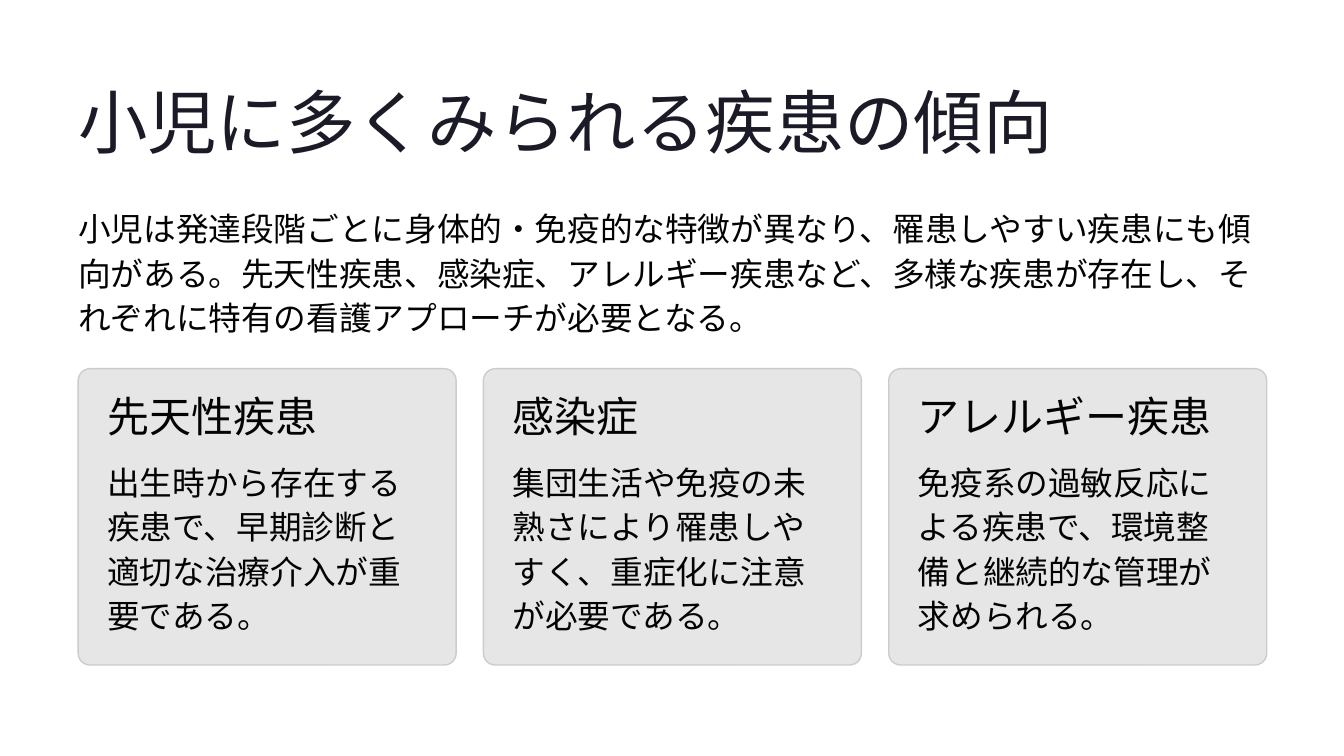
import pptx
import pptx.dml.color
import pptx.enum.shapes
import pptx.util

Pt = pptx.util.Pt
RGB = pptx.dml.color.RGBColor.from_string

COLORS = {"title": "1B1B27", "body": "030303", "card": "E6E6E6", "border": "CCCCCC"}
MARGIN = 67
CARD_TOP, CARD_W, CARD_H, CARD_PITCH = 316, 324, 254, 347.4
PADDING = 25

INTRO = (
    "小児は発達段階ごとに身体的・免疫的な特徴が異なり、罹患しやすい疾患にも傾向がある。"
    "先天性疾患、感染症、アレルギー疾患など、多様な疾患が存在し、"
    "それぞれに特有の看護アプローチが必要となる。"
)
CARDS = [
    ("先天性疾患", "出生時から存在する疾患で、早期診断と適切な治療介入が重要である。"),
    ("感染症", "集団生活や免疫の未熟さにより罹患しやすく、重症化に注意が必要である。"),
    ("アレルギー疾患", "免疫系の過敏反応による疾患で、環境整備と継続的な管理が求められる。"),
]

prs = pptx.Presentation()
prs.slide_width, prs.slide_height = Pt(1152), Pt(648)
s = prs.slides.add_slide(prs.slide_layouts[6])


def add_text(text, box, size, spacing, font, color="body", wrap=True):
    """Add a one-run text box without insets; box is left, top, width, height."""
    tf = s.shapes.add_textbox(*[Pt(v) for v in box]).text_frame
    tf.margin_left = tf.margin_top = tf.margin_right = tf.margin_bottom = 0
    tf.word_wrap = wrap
    p = tf.paragraphs[0]
    p.line_spacing = Pt(spacing)
    r = p.add_run()
    r.text = text
    r.font.name = font
    r.font.size = Pt(size)
    r.font.color.rgb = RGB(COLORS[color])


add_text("小児に多くみられる疾患の傾向", (MARGIN, 65.5, 836, 74), 59.5, 74, "Inter", "title", wrap=False)
add_text(INTRO, (MARGIN, 175, 1018.8, 114.5), 28, 38, "Lato")

for i, (heading, body) in enumerate(CARDS):
    left = MARGIN + i * CARD_PITCH
    sp = s.shapes.add_shape(
        pptx.enum.shapes.MSO_SHAPE.ROUNDED_RECTANGLE,
        Pt(left), Pt(CARD_TOP), Pt(CARD_W), Pt(CARD_H),
    )
    sp.adjustments[0] = 0.04
    sp.shadow.inherit = False
    sp.fill.solid()
    sp.fill.fore_color.rgb = RGB(COLORS["card"])
    sp.line.color.rgb = RGB(COLORS["border"])
    sp.line.width = Pt(1.2)
    text_w = CARD_W - 2 * PADDING
    add_text(heading, (left + PADDING, CARD_TOP + PADDING, text_w, 37.5), 36, 37, "Inter", wrap=False)
    add_text(body, (left + PADDING, CARD_TOP + 76.4, text_w, 152.6), 28, 38, "Lato")

prs.save("out.pptx")
